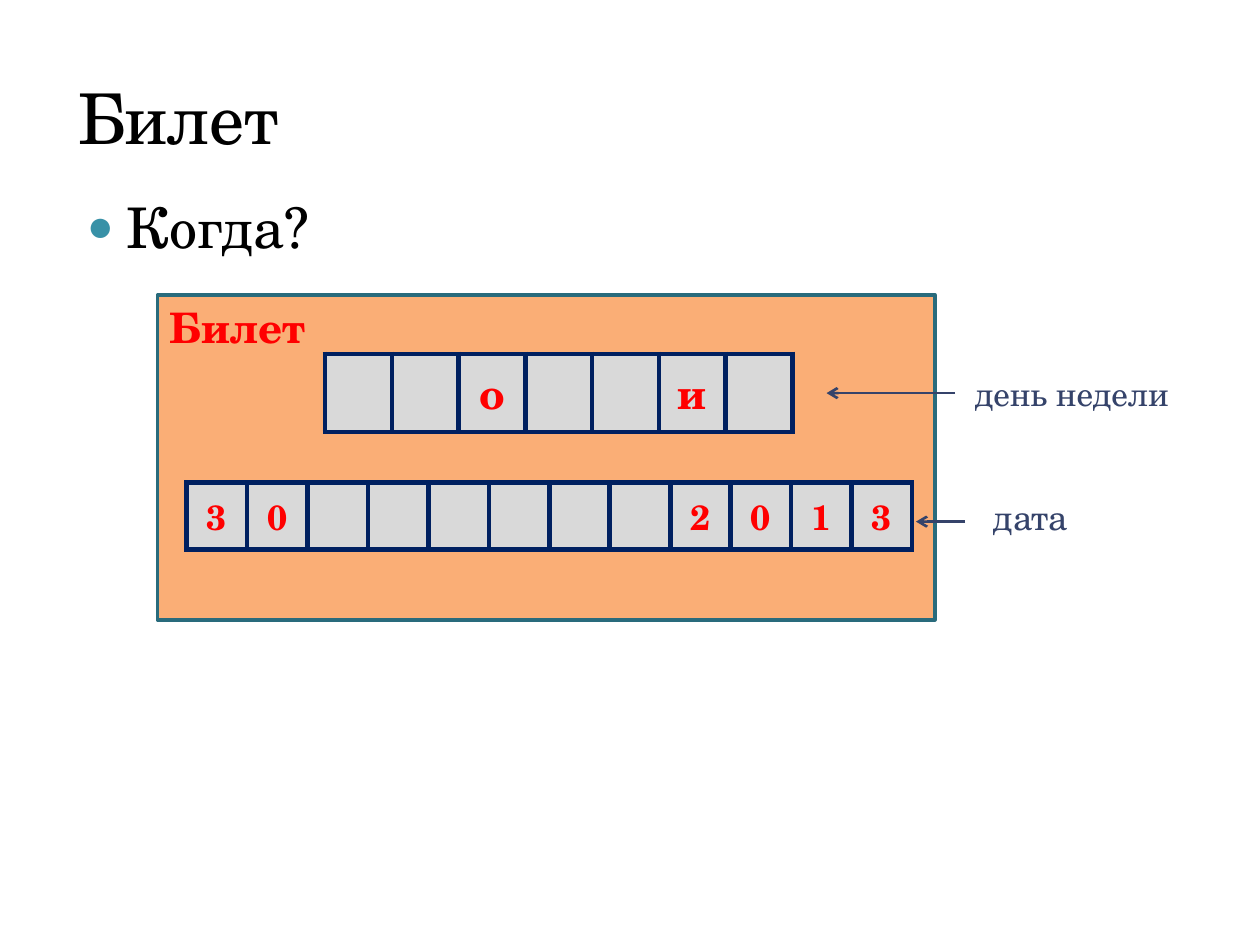
from lxml import etree
from pptx import Presentation
from pptx.dml.color import RGBColor
from pptx.enum.shapes import MSO_CONNECTOR, MSO_SHAPE
from pptx.enum.text import MSO_ANCHOR, PP_ALIGN
from pptx.oxml.ns import qn
from pptx.util import Inches, Pt

RECTANGLE = MSO_SHAPE.RECTANGLE
STRAIGHT = MSO_CONNECTOR.STRAIGHT
TOP, MIDDLE, BOTTOM = MSO_ANCHOR.TOP, MSO_ANCHOR.MIDDLE, MSO_ANCHOR.BOTTOM
LEFT, CENTER = PP_ALIGN.LEFT, PP_ALIGN.CENTER

FONT = "TeX Gyre Schola"
BLACK = RGBColor(0x00, 0x00, 0x00)
RED = RGBColor(0xFF, 0x00, 0x00)
INDIGO = RGBColor(0x35, 0x43, 0x6A)
TEAL = RGBColor(0x38, 0x91, 0xA7)
DARK_TEAL = RGBColor(0x29, 0x6B, 0x7C)
ORANGE = RGBColor(0xFA, 0xAE, 0x76)
GRAY = RGBColor(0xD9, 0xD9, 0xD9)
NAVY = RGBColor(0x00, 0x20, 0x60)


class TicketSlide:
    """Holds the style and the current slide, and draws each kind of element."""

    def __init__(self, presentation):
        self.slide = presentation.slides.add_slide(presentation.slide_layouts[1])
        self.shapes = self.slide.shapes

    def place(self, shape, left, top, width, height):
        shape.left, shape.top = Inches(left), Inches(top)
        shape.width, shape.height = Inches(width), Inches(height)

    def set_text(self, text_frame, text, size, color, bold=False, align=LEFT, anchor=TOP):
        text_frame.text = text
        text_frame.word_wrap = True
        text_frame.vertical_anchor = anchor
        paragraph = text_frame.paragraphs[0]
        paragraph.alignment = align
        for run in paragraph.runs:
            run.font.name = FONT
            run.font.size = Pt(size)
            run.font.bold = bold
            run.font.color.rgb = color
        return paragraph

    def title(self, text, *box):
        shape = self.shapes.title
        self.place(shape, *box)
        paragraph = self.set_text(shape.text_frame, text, 40, BLACK, anchor=BOTTOM)
        paragraph._p.get_or_add_pPr().set("marL", str(Inches(0.05)))

    def bullet(self, text, *box):
        shape = self.slide.placeholders[1]
        self.place(shape, *box)
        paragraph = self.set_text(shape.text_frame, text, 32, BLACK)
        paragraph.space_before = Pt(6)
        properties = paragraph._p.get_or_add_pPr()
        properties.set("marL", str(Inches(0.4)))
        properties.set("indent", str(Inches(-0.31)))
        color = etree.SubElement(properties, qn("a:buClr"))
        etree.SubElement(color, qn("a:srgbClr"), val=str(TEAL))
        etree.SubElement(properties, qn("a:buSzPct"), val="80000")
        etree.SubElement(properties, qn("a:buChar"), char="●")

    def card(self, text, *box):
        shape = self.shapes.add_shape(RECTANGLE, *map(Inches, box))
        shape.shadow.inherit = False
        shape.fill.solid()
        shape.fill.fore_color.rgb = ORANGE
        shape.line.color.rgb = DARK_TEAL
        shape.line.width = Pt(2)
        self.set_text(shape.text_frame, text, 24, RED, bold=True)

    def letter_row(self, letters, left, top, cell_width, height, size):
        width = cell_width * len(letters)
        frame = self.shapes.add_table(
            1, len(letters), Inches(left), Inches(top), Inches(width), Inches(height))
        table = frame.table
        table.first_row = table.horz_banding = False
        for column, letter in enumerate(letters):
            table.columns[column].width = Inches(cell_width)
            cell = table.cell(0, column)
            self.set_text(cell.text_frame, letter.strip(), size, RED, True, CENTER)
            cell.vertical_anchor = MIDDLE
            self.border(cell)
            cell.fill.solid()
            cell.fill.fore_color.rgb = GRAY

    def border(self, cell):
        properties = cell._tc.get_or_add_tcPr()
        for side in ("a:lnL", "a:lnR", "a:lnT", "a:lnB"):
            line = etree.SubElement(properties, qn(side), w=str(Pt(3)))
            fill = etree.SubElement(line, qn("a:solidFill"))
            etree.SubElement(fill, qn("a:srgbClr"), val=str(NAVY))

    def label(self, text, size, *box):
        shape = self.shapes.add_textbox(*map(Inches, box))
        self.set_text(shape.text_frame, text, size, INDIGO, anchor=MIDDLE)

    def arrow(self, start, end, y):
        connector = self.shapes.add_connector(
            STRAIGHT, Inches(start), Inches(y), Inches(end), Inches(y))
        connector.line.color.rgb = INDIGO
        connector.line.width = Pt(1.5)
        etree.SubElement(connector.line._get_or_add_ln(), qn("a:tailEnd"), type="arrow")
        etree.SubElement(connector._element.spPr, qn("a:effectLst"))


def main():
    presentation = Presentation()
    presentation.slide_width = Inches(10)
    presentation.slide_height = Inches(7.5)

    ticket = TicketSlide(presentation)
    ticket.title("Билет", 0.47, 0.55, 2.19, 0.76)
    ticket.bullet("Когда?", 0.5, 1.48, 8.92, 5.22)
    ticket.card("Билет", 1.25, 2.34, 6.17, 2.58)
    ticket.letter_row("  о  и ", 2.58, 2.81, 0.53, 0.62, 24)
    ticket.letter_row("30      2013", 1.48, 3.83, 0.48, 0.53, 20)
    ticket.label("день недели", 19, 7.64, 2.92, 1.9, 0.4)
    ticket.label("дата", 20, 7.79, 3.9, 1, 0.4)
    ticket.arrow(7.58, 6.56, 3.12)
    ticket.arrow(7.66, 7.27, 4.14)
    presentation.save("out.pptx")


if __name__ == "__main__":
    main()
